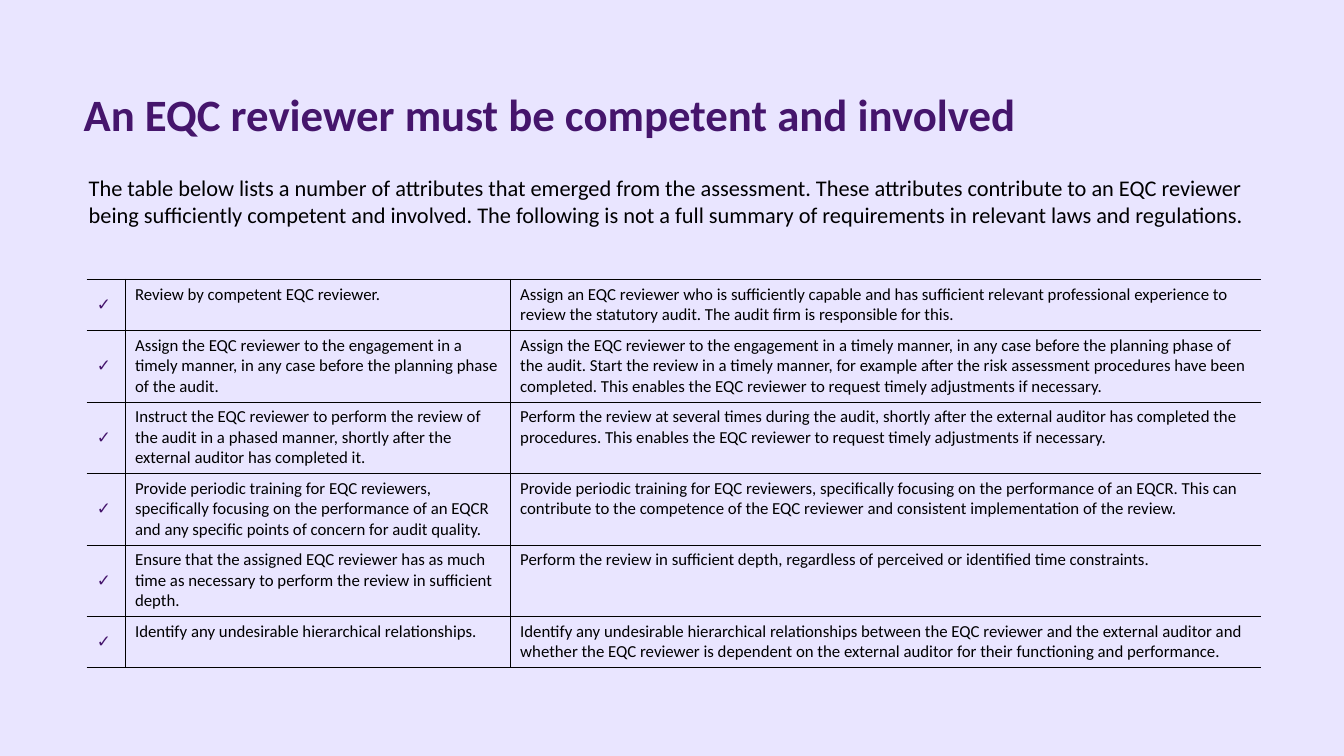
from lxml import etree
from pptx import Presentation
from pptx import util as u
from pptx.dml.color import RGBColor
from pptx.enum import text
from pptx.oxml.ns import qn

TITLE = "An EQC reviewer must be competent and involved"
INTRO = (
    "The table below lists a number of attributes that emerged from the assessment. "
    "These attributes contribute to an EQC reviewer being sufficiently competent and involved. "
    "The following is not a full summary of requirements in relevant laws and regulations."
)
CHECK = "✓"
ATTRIBUTES = [
    ("Review by competent EQC reviewer.",
     "Assign an EQC reviewer who is sufficiently capable and has sufficient relevant professional "
     "experience to review the statutory audit. The audit firm is responsible for this."),
    ("Assign the EQC reviewer to the engagement in a timely manner, in any case before the planning "
     "phase of the audit.",
     "Assign the EQC reviewer to the engagement in a timely manner, in any case before the planning "
     "phase of the audit. Start the review in a timely manner, for example after the risk assessment "
     "procedures have been completed. This enables the EQC reviewer to request timely adjustments if "
     "necessary."),
    ("Instruct the EQC reviewer to perform the review of the audit in a phased manner, shortly after "
     "the external auditor has completed it.",
     "Perform the review at several times during the audit, shortly after the external auditor has "
     "completed the procedures. This enables the EQC reviewer to request timely adjustments if "
     "necessary."),
    ("Provide periodic training for EQC reviewers, specifically focusing on the performance of an "
     "EQCR and any specific points of concern for audit quality.",
     "Provide periodic training for EQC reviewers, specifically focusing on the performance of an "
     "EQCR. This can contribute to the competence of the EQC reviewer and consistent implementation "
     "of the review."),
    ("Ensure that the assigned EQC reviewer has as much time as necessary to perform the review in "
     "sufficient depth.",
     "Perform the review in sufficient depth, regardless of perceived or identified time constraints."),
    ("Identify any undesirable hierarchical relationships.",
     "Identify any undesirable hierarchical relationships between the EQC reviewer and the external "
     "auditor and whether the EQC reviewer is dependent on the external auditor for their functioning "
     "and performance."),
]

COLORS = {"background": "E9E5FF", "accent": "45156C", "text": "000000"}
FONT = "Calibri"
WIDTH, HEIGHT = 13.33, 7.5
LEFT, CONTENT_W = 0.83, 11.68
TABLE_LEFT, TABLE_TOP = 0.86, 2.77
COLUMNS = [0.38, 3.82, 7.45]
LINES = [2, 3, 3, 3, 3, 2]  # text lines in each row
LINE_H, ROW_PAD = 0.2, 0.1


def write(p, words, size, color, bold=False):
    p.alignment = text.PP_ALIGN.LEFT
    r = p.add_run()
    r.text = words
    r.font.name, r.font.size, r.font.bold = FONT, u.Pt(size), bold
    r.font.color.rgb = RGBColor.from_string(COLORS[color])


def prepare_frame(tf):
    """Wrap from the top edge, without insets."""
    tf.word_wrap = True
    tf.auto_size = text.MSO_AUTO_SIZE.NONE
    tf.vertical_anchor = text.MSO_ANCHOR.TOP
    tf.margin_left = tf.margin_right = tf.margin_top = tf.margin_bottom = 0


def set_borders(cell, visible):
    """Rule the named sides (L, R, T, B) and leave the others bare."""
    tc_pr = cell._tc.get_or_add_tcPr()
    for i, side in enumerate("LRTB"):
        ln = etree.Element(qn(f"a:ln{side}"), w=str(u.Pt(0.5)))
        if side in visible:
            fill = etree.SubElement(ln, qn("a:solidFill"))
            etree.SubElement(fill, qn("a:srgbClr"), val=COLORS["text"])
        else:
            etree.SubElement(ln, qn("a:noFill"))
        tc_pr.insert(i, ln)


def add_attribute_table(s):
    heights = [n * LINE_H + ROW_PAD for n in LINES]
    table = s.shapes.add_table(
        len(ATTRIBUTES), len(COLUMNS), u.Inches(TABLE_LEFT), u.Inches(TABLE_TOP),
        u.Inches(sum(COLUMNS)), u.Inches(sum(heights))).table
    table.first_row = table.horz_banding = False
    for column, width in zip(table.columns, COLUMNS):
        column.width = u.Inches(width)
    for row, height, attribute in zip(table.rows, heights, ATTRIBUTES):
        row.height = u.Inches(height)
        for cell, words, sides in zip(row.cells, (CHECK, *attribute), ("RTB", "LRTB", "LTB")):
            is_check = words == CHECK
            cell.fill.background()
            set_borders(cell, sides)
            cell.vertical_anchor = text.MSO_ANCHOR.MIDDLE if is_check else text.MSO_ANCHOR.TOP
            write(cell.text_frame.paragraphs[0], words, 12, "accent" if is_check else "text", is_check)


def main():
    prs = Presentation()
    prs.slide_width, prs.slide_height = u.Inches(WIDTH), u.Inches(HEIGHT)
    s = prs.slides.add_slide(prs.slide_layouts[5])
    s.background.fill.solid()
    s.background.fill.fore_color.rgb = RGBColor.from_string(COLORS["background"])

    title = s.shapes.title
    title.left, title.top = u.Inches(LEFT), u.Inches(0.95)
    title.width, title.height = u.Inches(CONTENT_W), u.Inches(0.93)
    prepare_frame(title.text_frame)
    p = title.text_frame.paragraphs[0]
    p.line_spacing = 0.84
    write(p, TITLE, 32, "accent", True)

    intro = s.shapes.add_textbox(u.Inches(LEFT), u.Inches(1.73), u.Inches(CONTENT_W), u.Inches(1.2))
    prepare_frame(intro.text_frame)
    intro.text_frame.margin_left = u.Inches(0.05)
    write(intro.text_frame.paragraphs[0], INTRO, 16, "text")

    add_attribute_table(s)
    prs.save("out.pptx")


if __name__ == "__main__":
    main()
